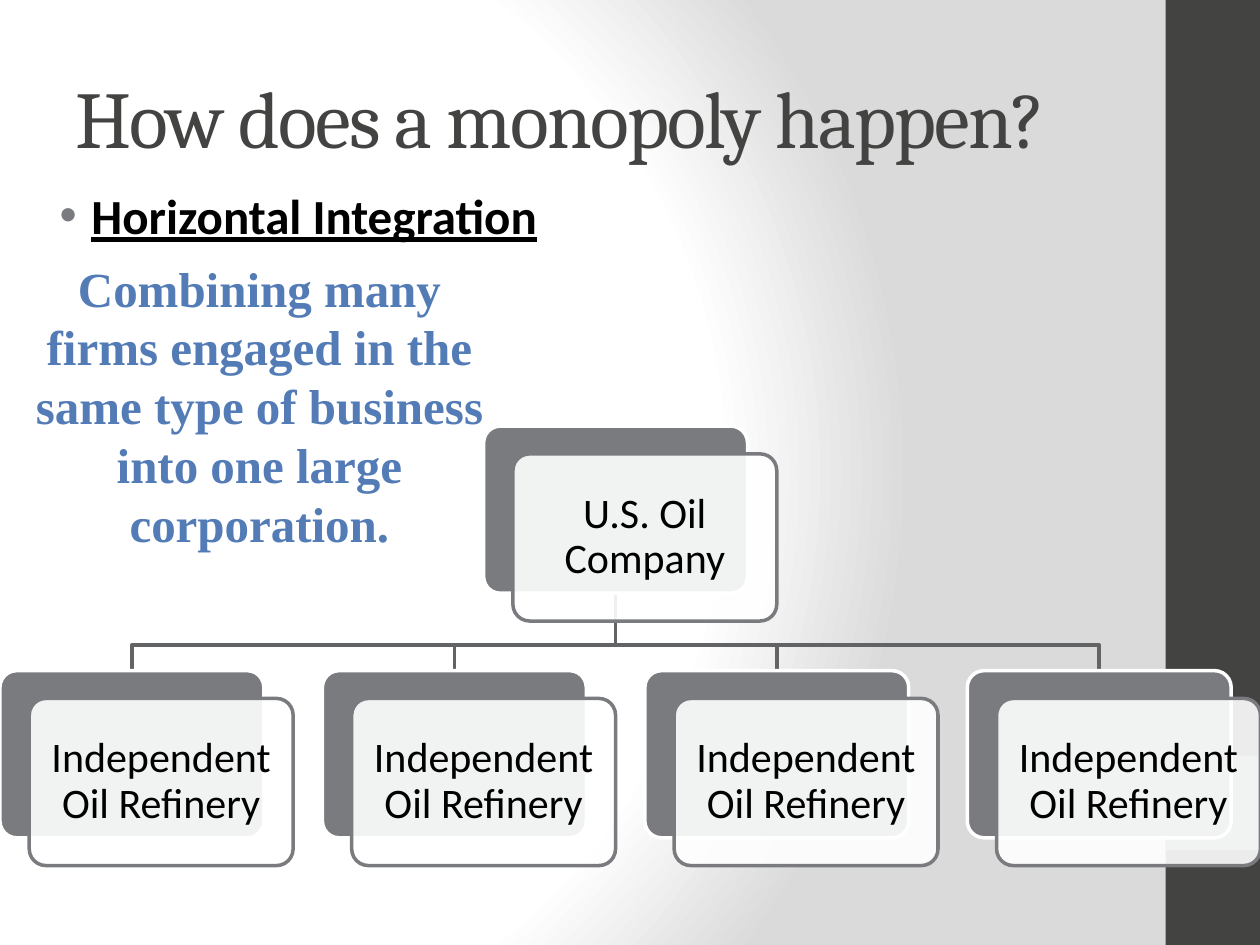
from lxml import etree
from pptx import Presentation
from pptx.dml.color import RGBColor
from pptx.enum.shapes import MSO_SHAPE
from pptx.enum.text import MSO_ANCHOR, MSO_AUTO_SIZE, PP_ALIGN
from pptx.oxml.ns import qn
from pptx.util import Cm, Pt

RECT, ROUNDED = MSO_SHAPE.RECTANGLE, MSO_SHAPE.ROUNDED_RECTANGLE
LEFT, CENTER = PP_ALIGN.LEFT, PP_ALIGN.CENTER
TOP, MIDDLE = MSO_ANCHOR.TOP, MSO_ANCHOR.MIDDLE
DARK, GREY, WHITE, BLACK = "434342", "797B7E", "FFFFFF", "000000"


def rgb(value):
    return RGBColor.from_string(value)


def write_text(frame, text, font="Calibri", size=24, color=BLACK, bold=False,
               underline=False, align=CENTER, anchor=MIDDLE, line_spacing=1.0,
               before=0, tracking=0):
    frame.word_wrap = True
    frame.auto_size = MSO_AUTO_SIZE.NONE
    frame.vertical_anchor = anchor
    paragraph = frame.paragraphs[0]
    paragraph.alignment = align
    paragraph.line_spacing = line_spacing
    paragraph.space_before = Pt(before)
    run = paragraph.add_run()
    run.text = text
    run.font.name = font
    run.font.size = Pt(size)
    run.font.bold = bold
    run.font.underline = underline
    run.font.color.rgb = rgb(color)
    if tracking:
        run._r.get_or_add_rPr().set("spc", str(tracking * 100))
    return paragraph


prs = Presentation()
prs.slide_width, prs.slide_height = Cm(25.4), Cm(19.05)
slide = prs.slides.add_slide(prs.slide_layouts[1])
shapes = slide.shapes

slide.background.fill.gradient()
gradient = slide.element.find(".//" + qn("a:gradFill"))
for child in list(gradient):
    gradient.remove(child)
stops = etree.SubElement(gradient, qn("a:gsLst"))
for position, color in ((0, WHITE), (75, WHITE), (100, "DADADA")):
    stop = etree.SubElement(stops, qn("a:gs"), pos=str(position * 1000))
    etree.SubElement(stop, qn("a:srgbClr"), val=color)
radial = etree.SubElement(gradient, qn("a:path"), path="circle")
etree.SubElement(radial, qn("a:fillToRect"), l="20000", t="50000", r="100000", b="50000")

for top, height, color in ((0, 19.05, DARK), (15.24, 1.9, GREY)):
    side_bar = shapes.add_shape(RECT, Cm(23.5), Cm(top), Cm(1.9), Cm(height))
    side_bar.shadow.inherit = False
    side_bar.fill.solid()
    side_bar.fill.fore_color.rgb = rgb(color)
    side_bar.line.fill.background()

heading = shapes.title
heading.left, heading.top, heading.width, heading.height = Cm(1.27), Cm(0.76), Cm(22.86), Cm(3.18)
write_text(heading.text_frame, "How does a monopoly happen?", font="Cambria", size=46,
           color=DARK, align=LEFT, tracking=-1)

term = slide.placeholders[1]
term.left, term.top, term.width, term.height = Cm(0.64), Cm(3.61), Cm(11.23), Cm(12.57)
term_line = write_text(term.text_frame, "Horizontal Integration", size=28, bold=True,
                       underline=True, align=LEFT, anchor=TOP, before=5.6)
bullet = term_line._p.get_or_add_pPr()
bullet.set("marL", str(Cm(0.95)))
bullet.set("indent", str(Cm(-0.64)))
bullet_color = etree.SubElement(bullet, qn("a:buClr"))
etree.SubElement(bullet_color, qn("a:srgbClr"), val=GREY)
etree.SubElement(bullet, qn("a:buChar"), char="•")

card_width, card_height = 5.32, 3.37
pitch = 6.5
company_left, company_top = 1.5 * pitch, 8.59
refinery_top = 13.52
refinery_lefts = [column * pitch for column in range(4)]

stem_x = company_left + card_width / 2
stem_top = company_top + card_height
branch_y = 13
for left in reversed(refinery_lefts):
    branch_x = left + card_width / 2
    route = [(stem_x, branch_y), (branch_x, branch_y), (branch_x, refinery_top)]
    builder = shapes.build_freeform(Cm(stem_x), Cm(stem_top))
    builder.add_line_segments([(Cm(x), Cm(y)) for x, y in route], close=False)
    branch = builder.convert_to_shape()
    branch.shadow.inherit = False
    branch.fill.background()
    branch.line.color.rgb = rgb("616365")
    branch.line.width = Pt(2)

firms = [(company_left, company_top, "U.S. Oil Company")]
firms += [(left, refinery_top, "Independent Oil Refinery") for left in refinery_lefts]
for left, top, label in firms:
    for dx, dy, fill, outline in ((0, 0, GREY, WHITE), (0.59, 0.56, WHITE, GREY)):
        card = shapes.add_shape(ROUNDED, Cm(left + dx), Cm(top + dy),
                                Cm(card_width), Cm(card_height))
        card.adjustments[0] = 0.1
        card.shadow.inherit = False
        card.fill.solid()
        card.fill.fore_color.rgb = rgb(fill)
        card.line.color.rgb = rgb(outline)
        card.line.width = Pt(2)
    card_color = card.element.spPr.find(qn("a:solidFill")).find(qn("a:srgbClr"))
    etree.SubElement(card_color, qn("a:alpha"), val="90000")
    frame = card.text_frame
    frame.margin_left = frame.margin_right = Cm(0.25)
    frame.margin_top = frame.margin_bottom = Cm(0.25)
    write_text(frame, label, line_spacing=0.9)

definition = shapes.add_textbox(Cm(0.43), Cm(5.08), Cm(9.6), Cm(6.25))
write_text(definition.text_frame,
           "Combining many firms engaged in the same type of business into one large corporation.",
           font="Times New Roman", size=28, color="537BB6", bold=True, anchor=TOP)

prs.save("out.pptx")
